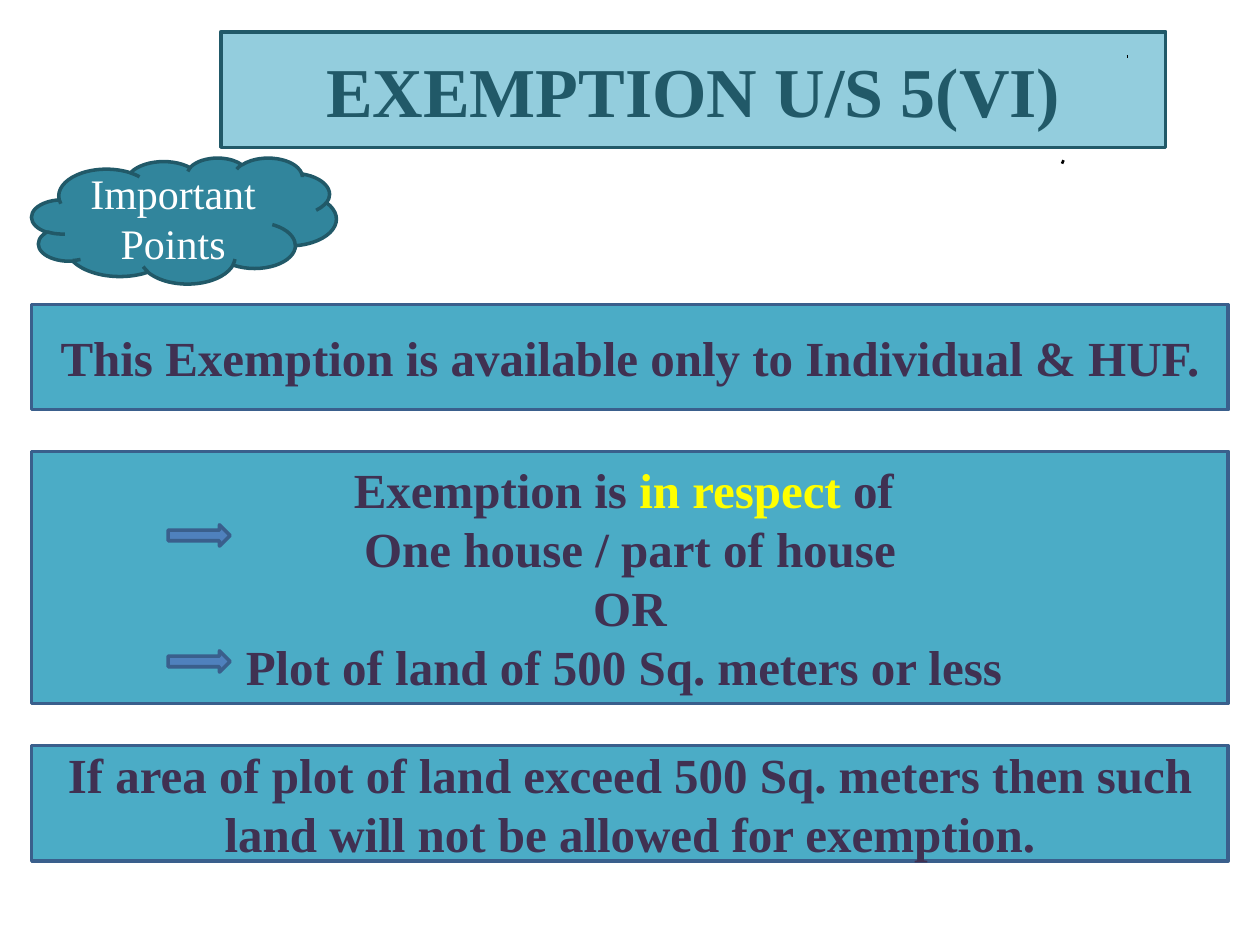
import dataclasses
import typing

import lxml.etree
import pptx
import pptx.dml.color
import pptx.enum.shapes
import pptx.enum.text
import pptx.oxml.ns
import pptx.util

Cm = pptx.util.Cm
Pt = pptx.util.Pt
Kind = pptx.enum.shapes.MSO_SHAPE

FONT = "Times New Roman"
TEAL, NAVY, PLUM, YELLOW = "215968", "3A5F8C", "403152", "FFFF00"
EDGE = 0.64
WIDE = 25.4 - 2 * EDGE


@dataclasses.dataclass
class Box:
    kind: Kind
    left: float
    top: float
    width: float
    height: float
    fill: str
    line: str
    lines: tuple = ()
    size: int = 28
    ink: str = PLUM
    bold: bool = True


@dataclasses.dataclass
class Mark:
    """A small pen stroke."""
    start: tuple
    end: tuple


def tint(code: str) -> pptx.dml.color.RGBColor:
    return pptx.dml.color.RGBColor.from_string(code)


def paint(shape: typing.Any, fill: str, line: str) -> None:
    shape.fill.solid()
    shape.fill.fore_color.rgb = tint(fill)
    shape.line.color.rgb = tint(line)
    shape.line.width = Pt(2)


def write(shape: typing.Any, box: Box) -> None:
    """Fill in the lines; a tuple is a line of (text, colour) runs."""
    frame = shape.text_frame
    frame.word_wrap = True
    frame.auto_size = pptx.enum.text.MSO_AUTO_SIZE.NONE
    frame.vertical_anchor = pptx.enum.text.MSO_ANCHOR.MIDDLE
    for index, line in enumerate(box.lines):
        para = frame.add_paragraph() if index else frame.paragraphs[0]
        para.alignment = pptx.enum.text.PP_ALIGN.CENTER
        parts = ((line, box.ink),) if isinstance(line, str) else line
        for text, ink in parts:
            run = para.add_run()
            run.text = text
            run.font.name = FONT
            run.font.size = Pt(box.size)
            run.font.bold = box.bold
            run.font.color.rgb = tint(ink)


def draw(slide: typing.Any, box: Box) -> None:
    place = [Cm(v) for v in (box.left, box.top, box.width, box.height)]
    shape = slide.shapes.add_shape(box.kind, *place)
    shape.shadow.inherit = False
    paint(shape, box.fill, box.line)
    write(shape, box)


def head(slide: typing.Any, box: Box) -> None:
    """Dress the title placeholder as a rounded panel."""
    title = slide.shapes.title
    title.left, title.top = Cm(box.left), Cm(box.top)
    title.width, title.height = Cm(box.width), Cm(box.height)
    name = pptx.oxml.ns.qn("a:prstGeom")
    geom = lxml.etree.SubElement(title.element.spPr, name)
    geom.set("prst", "flowChartAlternateProcess")
    lxml.etree.SubElement(geom, pptx.oxml.ns.qn("a:avLst"))
    paint(title, box.fill, box.line)
    write(title, box)


def stroke(slide: typing.Any, mark: Mark) -> None:
    x, y = mark.start
    pen = slide.shapes.build_freeform(Cm(x), Cm(y))
    pen.add_line_segments([tuple(Cm(v) for v in mark.end)], close=False)
    shape = pen.convert_to_shape()
    shape.shadow.inherit = False
    shape.fill.background()
    shape.line.color.rgb = tint("000000")
    shape.line.width = Pt(1.5)


def panel(top: float, height: float, *lines: typing.Any) -> Box:
    return Box(Kind.FLOWCHART_PROCESS, EDGE, top, WIDE, height,
               "4BACC6", NAVY, lines)


TITLE = Box(Kind.FLOWCHART_ALTERNATE_PROCESS, 4.45, 0.64, 19.05, 2.33,
            "93CDDD", TEAL, ("EXEMPTION U/S 5(VI)",), 40, TEAL)
BOXES = [
    Box(Kind.CLOUD, EDGE, 3.18, 6.14, 2.54, "31859C", TEAL,
        ("Important Points",), 24, "FFFFFF", False),
    panel(6.14, 2.12, "This Exemption is available only to Individual & HUF."),
    panel(15.03, 2.33, "If area of plot of land exceed 500 Sq. meters "
          "then such land will not be allowed for exemption."),
    panel(9.1, 5.08,
          (("Exemption is ", PLUM), ("in respect", YELLOW), (" of ", PLUM)),
          "One house / part of house",
          "OR",
          "Plot of land of 500 Sq. meters or less "),
    *(Box(Kind.RIGHT_ARROW, 3.39, top, 1.25, 0.43, "4F81BD", NAVY)
      for top in (10.58, 13.12)),
]
MARKS = [Mark((22.71, 1.14), (22.73, 1.14)), Mark((21.41, 3.3), (21.44, 3.23))]


def main() -> None:
    deck = pptx.Presentation()
    deck.slide_width, deck.slide_height = Cm(25.4), Cm(19.05)
    slide = deck.slides.add_slide(deck.slide_layouts[5])
    head(slide, TITLE)
    for box in BOXES:
        draw(slide, box)
    for mark in MARKS:
        stroke(slide, mark)
    deck.save("out.pptx")


if __name__ == "__main__":
    main()
